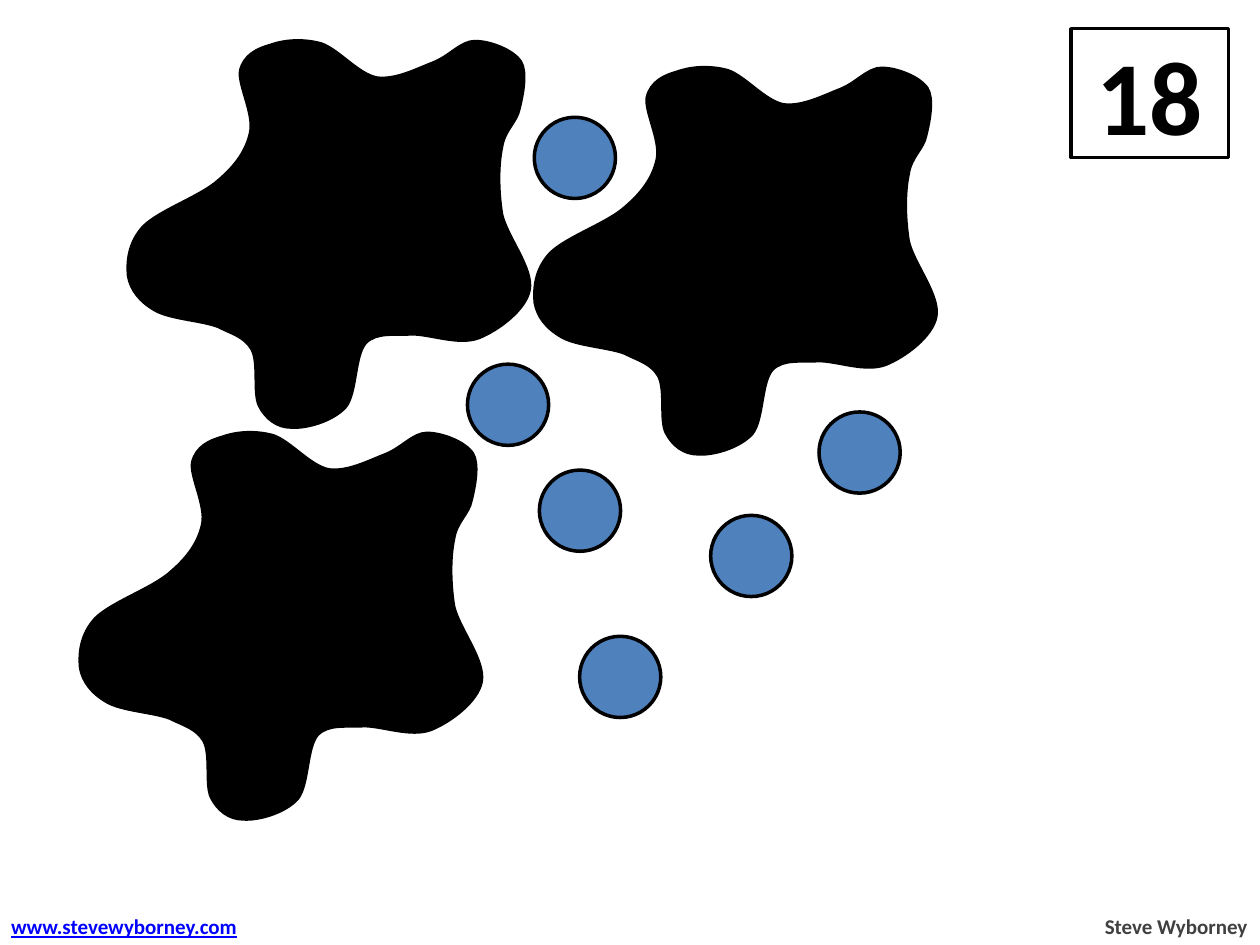
from lxml.etree import SubElement
from pptx import Presentation
from pptx.dml.color import RGBColor
from pptx.enum.shapes import MSO_SHAPE as Shape
from pptx.enum.text import MSO_ANCHOR as Anchor, PP_ALIGN as Align
from pptx.oxml.ns import qn
from pptx.util import Pt

BLACK = RGBColor(0x00, 0x00, 0x00)
WHITE = RGBColor(0xFF, 0xFF, 0xFF)
GRAY = RGBColor(0x40, 0x40, 0x40)
DOT_BLUE = RGBColor(0x4F, 0x81, 0xBD)
LINK_BLUE = RGBColor(0x00, 0x00, 0xFF)

DOT_SIZE = 46.4
DOT_POSITIONS = [
    (160.6, 59), (108, 118.8), (71.3, 344.9), (231.1, 97.2), (211, 259.9),
    (305.3, 67), (159.1, 165.6), (172.8, 357.8), (308.2, 268.6),
    (337, 140.4), (331.2, 363.6), (267.1, 208.1), (383, 201.6),
    (406.1, 294.5), (126, 267.1), (468, 235.4), (405.4, 97.2), (468, 144.7),
]
SPLAT_POSITIONS = [(72, 21.6), (304.4, 36.9), (44.6, 245.5)]

# Splat outline: a start point, then Bezier segments (two controls and an end).
SPLAT_UNIT = 0.72
SPLAT_START = (23, 216)
SPLAT_CURVES = [
    ((11, 209), (4, 200), (2, 189)),
    ((1, 178), (2, 163), (14, 150)),
    ((27, 137), (60, 126), (74, 113)),
    ((88, 101), (96, 89), (99, 75)),
    ((102, 60), (89, 37), (91, 26)),
    ((94, 14), (104, 9), (115, 6)),
    ((126, 2), (141, 1), (155, 5)),
    ((169, 10), (184, 29), (199, 32)),
    ((214, 34), (231, 25), (244, 20)),
    ((257, 15), (266, 3), (277, 3)),
    ((289, 3), (307, 10), (313, 19)),
    ((318, 27), (315, 44), (312, 56)),
    ((310, 67), (300, 73), (298, 87)),
    ((295, 101), (295, 121), (298, 140)),
    ((302, 158), (323, 183), (320, 200)),
    ((317, 216), (295, 232), (280, 238)),
    ((264, 244), (242, 235), (227, 235)),
    ((213, 236), (199, 233), (190, 242)),
    ((181, 252), (183, 282), (174, 293)),
    ((164, 304), (143, 310), (131, 309)),
    ((120, 309), (111, 302), (106, 292)),
    ((101, 282), (106, 258), (100, 247)),
    ((94, 237), (85, 235), (73, 229)),
    ((60, 224), (35, 223), SPLAT_START),
]


def style_shape(shape, fill):
    shape.shadow.inherit = False
    shape.fill.solid()
    shape.fill.fore_color.rgb = fill
    shape.line.color.rgb = BLACK
    shape.line.width = Pt(2)


def add_preset(slide, kind, left, top, width, height, fill):
    shape = slide.shapes.add_shape(kind, Pt(left), Pt(top), Pt(width), Pt(height))
    style_shape(shape, fill)
    return shape


def write_text(shape, text, *, size, color, align=Align.LEFT,
               anchor=Anchor.TOP, wrap=False, underline=False):
    frame = shape.text_frame
    frame.word_wrap = wrap
    frame.vertical_anchor = anchor
    paragraph = frame.paragraphs[0]
    paragraph.alignment = align
    run = paragraph.add_run()
    run.text = text
    font = run.font
    font.name = "Calibri"
    font.size = Pt(size)
    font.bold = True
    font.underline = underline
    font.color.rgb = color


def add_footer(slide, left, width, text, **text_format):
    box = slide.shapes.add_textbox(Pt(left), Pt(518.4), Pt(width), Pt(21.6))
    write_text(box, text, size=12, **text_format)


def bend_segments(shape, curves, left, top):
    """Turn the straight segments of a freeform into Bezier curves."""
    segments = list(shape.element.iter(qn("a:lnTo")))
    for segment, curve in zip(segments, curves):
        segment.clear()
        bezier = SubElement(segment.getparent(), qn("a:cubicBezTo"))
        for x, y in curve:
            SubElement(bezier, qn("a:pt"), x=str(x - left), y=str(y - top))
        segment.getparent().replace(segment, bezier)


def add_splat(slide, left, top):
    ends = [curve[-1] for curve in SPLAT_CURVES]
    builder = slide.shapes.build_freeform(*SPLAT_START, scale=Pt(SPLAT_UNIT))
    builder.add_line_segments(ends, close=True)
    splat = builder.convert_to_shape(Pt(left), Pt(top))
    bend_segments(splat, SPLAT_CURVES,
                  min(x for x, _ in ends), min(y for _, y in ends))
    style_shape(splat, BLACK)


def main():
    presentation = Presentation()
    presentation.slide_width = Pt(720)
    presentation.slide_height = Pt(540)
    slide = presentation.slides.add_slide(presentation.slide_layouts.get_by_name("Blank"))

    total = add_preset(slide, Shape.RECTANGLE, 612, 16.4, 90, 73.6, WHITE)
    write_text(total, "18", size=60, color=BLACK, align=Align.CENTER,
               anchor=Anchor.MIDDLE, wrap=True)
    add_footer(slide, 623.5, 96.5, "Steve Wyborney", color=GRAY, align=Align.RIGHT)
    add_footer(slide, -0.8, 147.6, "www.stevewyborney.com", color=LINK_BLUE,
               underline=True)

    for left, top in DOT_POSITIONS:
        add_preset(slide, Shape.OVAL, left, top, DOT_SIZE, DOT_SIZE, DOT_BLUE)
    for left, top in SPLAT_POSITIONS:
        add_splat(slide, left, top)

    presentation.save("out.pptx")


if __name__ == "__main__":
    main()
